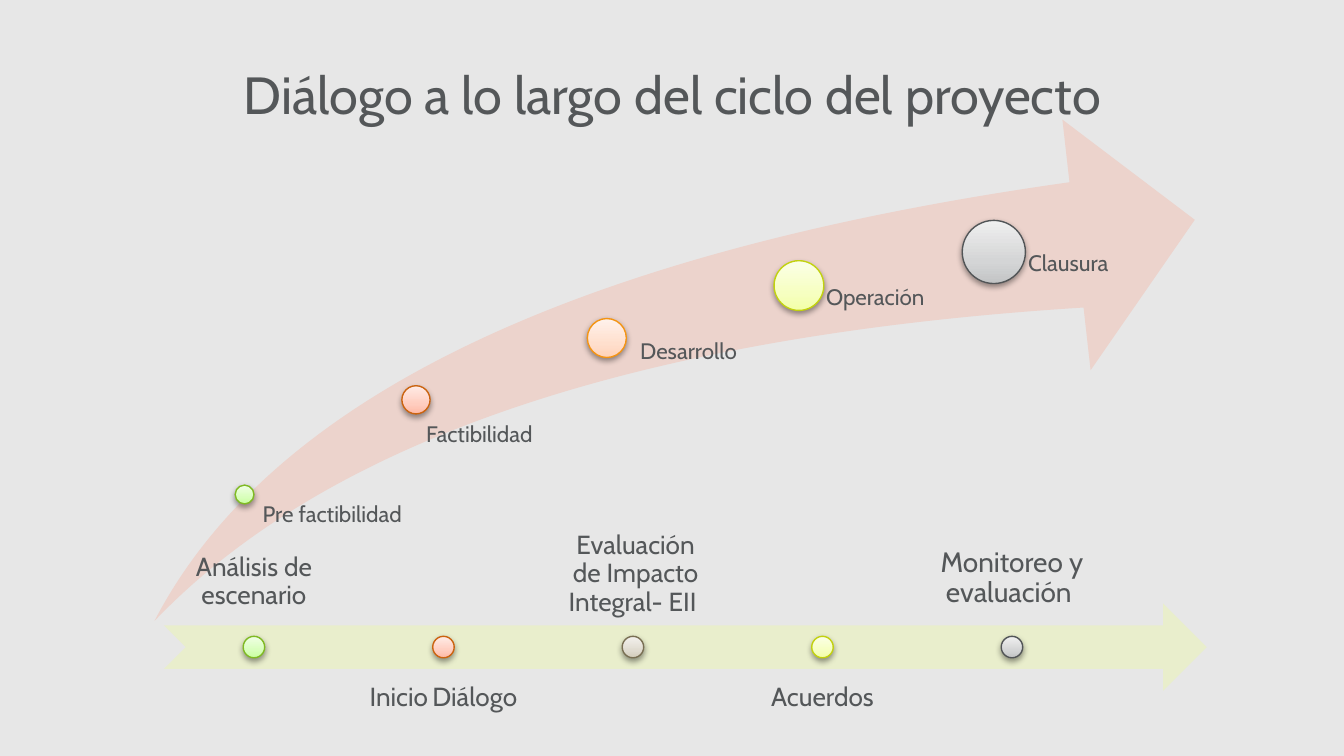
from lxml import etree
from pptx import Presentation
from pptx.dml.color import RGBColor
from pptx.enum.shapes import MSO_SHAPE
from pptx.enum.text import MSO_ANCHOR, PP_ALIGN
from pptx.oxml.ns import qn
from pptx.util import Inches, Pt

OVAL = MSO_SHAPE.OVAL
SWOOSH = MSO_SHAPE.SWOOSH_ARROW
NOTCHED = MSO_SHAPE.NOTCHED_RIGHT_ARROW
LEFT, CENTER = PP_ALIGN.LEFT, PP_ALIGN.CENTER
TOP, MIDDLE, BOTTOM = MSO_ANCHOR.TOP, MSO_ANCHOR.MIDDLE, MSO_ANCHOR.BOTTOM

FONT = "Cabin"
INK = "545759"
GREEN = ("7FBA22", "C9FF9F", "D8FFBB", "F0FFE5")
RED = ("CB630F", "FFB9A5", "FFCDBF", "FFECE7")
ORANGE = ("F49413", "FFD2B8", "FFDFCD", "FFF2EC")
LIME = ("C2D10F", "F3FFA7", "F6FFC1", "FBFFE7")
GRAY = ("525557", "C2C4C5", "D4D5D6", "EFEFEF")
TAUPE = ("796F53", "D3CCBB", "E0DBD0", "F3F1ED")

PHASES = [
    ("Pre factibilidad", GREEN, 0.6, 2.72, 0.14, 0.73, 2.85, 1.4),
    ("Factibilidad", RED, 1.84, 1.98, 0.21, 1.91, 2.26, 1.46),
    ("Desarrollo", ORANGE, 3.22, 1.48, 0.29, 3.46, 1.64, 1.15),
    ("Operación", LIME, 4.61, 1.05, 0.37, 4.8, 1.24, 1.19),
    ("Clausura", GRAY, 6.01, 0.75, 0.47, 6.25, 0.99, 1.19),
]
STEPS = [
    ([("Análisis de escenario", 14)], GREEN, 0, -0.49, BOTTOM, 0.11),
    ([("Inicio", 14), (" ", 10), ("Diálogo", 14)], RED, 0, 0.49, TOP, 0.11),
    ([("Evaluación de Impacto Integral- EII ", 14)], TAUPE, 0.02, -0.44, BOTTOM, 0.11),
    ([("Acuerdos", 14)], LIME, 0, 0.49, TOP, 0.11),
    ([("Monitoreo y evaluación ", 15)], GRAY, 0, -0.49, BOTTOM, 0.12),
]


def rgb(value):
    return RGBColor.from_string(value)


def inches(*values):
    return [Inches(v) for v in values]


def write(sp, runs, align=LEFT, anchor=TOP, insets=(0, 0, 0, 0), spacing=0.9):
    tf = sp.text_frame
    tf.word_wrap = True
    tf.vertical_anchor = anchor
    tf.margin_left, tf.margin_top, tf.margin_right, tf.margin_bottom = inches(*insets)
    p = tf.paragraphs[0]
    p.alignment = align
    p.line_spacing = spacing
    for text, size in runs:
        r = p.add_run()
        r.text = text
        r.font.name = FONT
        r.font.size = Pt(size)
        r.font.color.rgb = rgb(INK)


def add_arrow(s, kind, box, color):
    sp = s.shapes.add_shape(kind, *inches(*box))
    sp.shadow.inherit = False
    sp.fill.solid()
    sp.fill.fore_color.rgb = rgb(color)
    sp.line.fill.background()
    return sp


def add_color(parent, value):
    color = etree.SubElement(parent, qn("a:srgbClr"))
    color.set("val", value)
    return color


def add_dot(s, x, y, size, palette):
    line, *stops = palette
    sp = s.shapes.add_shape(OVAL, *inches(x, y, size, size))
    sp.fill.gradient()
    sp.fill.gradient_angle = 90
    stop_list = sp._element.spPr.find(qn("a:gradFill")).find(qn("a:gsLst"))
    for stop in list(stop_list):
        stop_list.remove(stop)
    for position, value in zip((0, 35000, 100000), stops):
        stop = etree.SubElement(stop_list, qn("a:gs"))
        stop.set("pos", str(position))
        add_color(stop, value)
    sp.line.color.rgb = rgb(line)
    sp.line.width = Pt(0.75)
    sp.shadow.inherit = False
    effects = sp._element.spPr.find(qn("a:effectLst"))
    shadow = etree.SubElement(effects, qn("a:outerShdw"))
    for name, value in (("blurRad", Pt(3.1)), ("dist", Pt(1.6)),
                        ("dir", 5400000), ("rotWithShape", 0)):
        shadow.set(name, str(int(value)))
    alpha = etree.SubElement(add_color(shadow, "000000"), qn("a:alpha"))
    alpha.set("val", "38000")


def add_title(s, box):
    sp = s.shapes.title
    sp.left, sp.top, sp.width, sp.height = inches(*box)
    write(sp, [("Diálogo a lo largo del ciclo del proyecto", 28)],
          align=CENTER, anchor=MIDDLE, spacing=1)


def add_project_cycle(s, box):
    x, y, w, h = box
    arrow = add_arrow(s, SWOOSH, box, "ECD3CC")
    arrow.adjustments[0] = 0.25
    arrow.adjustments[1] = 0.25
    for text, palette, dot_x, dot_y, size, label_x, label_y, width in PHASES:
        add_dot(s, x + dot_x, y + dot_y, size, palette)
        label = s.shapes.add_textbox(
            *inches(x + label_x, y + label_y, width, h - label_y))
        write(label, [(text, 12)], insets=(size * 0.53, 0, 0, 0))


def add_dialogue_line(s, box):
    x, y, w, h = box
    label_w, pitch, dot = 1.34, 1.41, 0.16
    add_arrow(s, NOTCHED, box, "E9EECC")
    for i, (runs, palette, shift, offset, anchor, inset) in enumerate(STEPS):
        left = x + i * pitch
        label = s.shapes.add_textbox(*inches(left + shift, y + offset, label_w, h))
        write(label, runs, align=CENTER, anchor=anchor, insets=[inset] * 4)
        add_dot(s, left + (label_w - dot) / 2, y + (h - dot) / 2, dot, palette)


def main():
    prs = Presentation()
    prs.slide_width = Inches(10)
    prs.slide_height = prs.slide_width * 9 // 16
    s = prs.slides.add_slide(prs.slide_layouts[5])
    s.background.fill.solid()
    s.background.fill.fore_color.rgb = rgb("E7E7E7")
    add_title(s, (0.5, 0.23, 9, 0.94))
    add_project_cycle(s, (1.15, 0.89, 7.74, 3.73))
    add_dialogue_line(s, (1.22, 4.49, 7.76, 0.65))
    prs.save("out.pptx")


if __name__ == "__main__":
    main()
